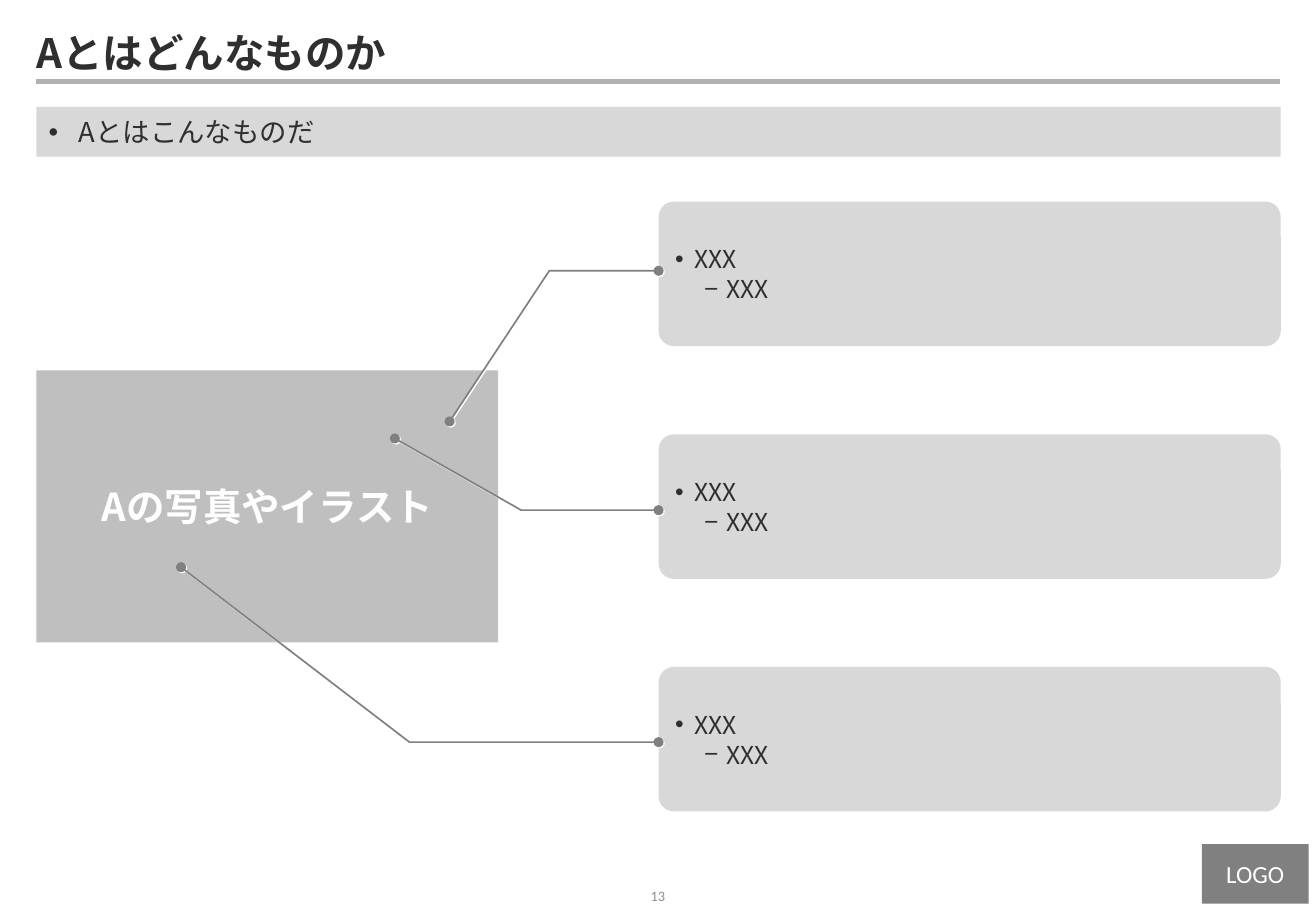
from dataclasses import dataclass

from lxml.etree import SubElement
from pptx import Presentation
from pptx.dml.color import RGBColor
from pptx.enum.shapes import MSO_CONNECTOR, MSO_SHAPE
from pptx.enum.text import MSO_ANCHOR, MSO_AUTO_SIZE, PP_ALIGN
from pptx.oxml.ns import qn
from pptx.util import Inches, Pt


@dataclass(frozen=True)
class Theme:
    japanese_font: str = "Noto Sans CJK JP"
    latin_font: str = "Calibri"
    ink: str = "2F2F2F"
    white: str = "FFFFFF"
    rule: str = "B1B1B1"
    panel: str = "D8D8D8"
    illustration: str = "BFBFBF"
    accent: str = "808080"
    muted: str = "8F8F8F"
    title_size: float = 24
    illustration_size: float = 22.8
    lead_size: float = 16.2
    body_size: float = 14.6
    number_size: float = 8.5


THEME = Theme()


def add_bullet(paragraph, character, left, hanging):
    properties = paragraph._p.get_or_add_pPr()
    properties.set("marL", str(Inches(left)))
    properties.set("indent", str(-Inches(hanging)))
    SubElement(properties, qn("a:buFont"), typeface="Arial")
    SubElement(properties, qn("a:buChar"), char=character)


def write(paragraph, text, size=THEME.body_size, color=THEME.ink, font=THEME.japanese_font,
          bold=False, align=PP_ALIGN.LEFT, line_spacing=None, space_before=0,
          level=0, bullet=None):
    """Fill a paragraph; bullet is (character, left margin, hanging indent)."""
    paragraph.alignment = align
    paragraph.level = level
    paragraph.space_before = Pt(space_before)
    if line_spacing:
        paragraph.line_spacing = line_spacing
    if bullet:
        add_bullet(paragraph, *bullet)
    run = paragraph.add_run()
    run.text = text
    run.font.size = Pt(size)
    run.font.bold = bold
    run.font.name = font
    run.font.color.rgb = RGBColor.from_string(color)
    SubElement(run._r.get_or_add_rPr(), qn("a:ea"), typeface=font)


class SlideBuilder:
    def __init__(self, slide, theme):
        self.slide = slide
        self.theme = theme

    def frame(self, shape, anchor=MSO_ANCHOR.MIDDLE, insets=(0.1, 0.05, 0.1, 0.05)):
        """Set up the text frame and return it."""
        frame = shape.text_frame
        frame.word_wrap = True
        frame.auto_size = MSO_AUTO_SIZE.NONE
        frame.vertical_anchor = anchor
        (frame.margin_left, frame.margin_top,
         frame.margin_right, frame.margin_bottom) = map(Inches, insets)
        return frame

    def fill(self, shape, color):
        shape.fill.solid()
        shape.fill.fore_color.rgb = RGBColor.from_string(color)

    def placeholder(self, index, box, text, fill=None, anchor=MSO_ANCHOR.MIDDLE,
                    insets=(0, 0, 0.1, 0), **text_format):
        shape = self.slide.placeholders[index]
        shape.left, shape.top, shape.width, shape.height = map(Inches, box)
        if fill:
            self.fill(shape, fill)
        frame = self.frame(shape, anchor, insets)
        write(frame.paragraphs[0], text, line_spacing=0.9, **text_format)

    def panel(self, box, fill, kind=MSO_SHAPE.RECTANGLE):
        shape = self.slide.shapes.add_shape(kind, *map(Inches, box))
        shape.shadow.inherit = False
        shape.line.fill.background()
        self.fill(shape, fill)
        return shape

    def label(self, box, fill, text, **text_format):
        frame = self.frame(self.panel(box, fill))
        write(frame.paragraphs[0], text, color=self.theme.white,
              align=PP_ALIGN.CENTER, **text_format)

    def note(self, box, point, detail):
        shape = self.panel(box, self.theme.panel, MSO_SHAPE.ROUNDED_RECTANGLE)
        shape.adjustments[0] = 0.106
        frame = self.frame(shape)
        spacing = Pt(17.8)
        write(frame.paragraphs[0], point, line_spacing=spacing, bullet=("•", 0.16, 0.16))
        write(frame.add_paragraph(), detail, line_spacing=spacing, level=1,
              bullet=("−", 0.42, 0.18))

    def page_number(self, box, text):
        shape = self.slide.shapes.add_textbox(*map(Inches, box))
        frame = self.frame(shape, insets=(0, 0, 0, 0))
        write(frame.paragraphs[0], text, size=self.theme.number_size, color=self.theme.muted,
              font=self.theme.latin_font, align=PP_ALIGN.CENTER)

    def rule(self, left, right, top):
        line = self.slide.shapes.add_connector(
            MSO_CONNECTOR.STRAIGHT, *map(Inches, (left, top, right, top)))
        line.line.color.rgb = RGBColor.from_string(self.theme.rule)
        line.line.width = Pt(3)
        SubElement(line._element.spPr, qn("a:effectLst"))

    def callout(self, *points):
        """Draw an open bent line with round ends and a thin white halo."""
        start, *rest = [tuple(map(Inches, point)) for point in points]
        builder = self.slide.shapes.build_freeform(*start, scale=1.0)
        builder.add_line_segments(rest, close=False)
        shape = builder.convert_to_shape()
        shape.fill.background()
        shape.line.color.rgb = RGBColor.from_string(self.theme.accent)
        shape.line.width = Pt(1)
        outline = shape.line._get_or_add_ln()
        for end in ("a:headEnd", "a:tailEnd"):
            SubElement(outline, qn(end), type="oval")
        shape.shadow.inherit = False
        effects = shape._element.spPr.find(qn("a:effectLst"))
        halo = SubElement(effects, qn("a:outerShdw"), blurRad="0", dist=str(Pt(1)),
                          dir="2700000", rotWithShape="0")
        SubElement(halo, qn("a:srgbClr"), val=self.theme.white)


def main():
    presentation = Presentation()
    presentation.slide_width = Inches(10.83)
    presentation.slide_height = Inches(7.5)
    slide = presentation.slides.add_slide(presentation.slide_layouts[1])
    builder = SlideBuilder(slide, THEME)

    left, width = 0.3, 10.24
    builder.rule(left, 10.53, 0.67)
    builder.label((9.89, 6.95, 0.88, 0.49), THEME.accent, "LOGO", font=THEME.latin_font)
    builder.page_number((5.1, 7.25, 0.63, 0.25), "13")
    builder.placeholder(0, (left, 0.25, width, 0.41), "Aとはどんなものか",
                        size=THEME.title_size, bold=True)
    builder.placeholder(1, (left, 0.88, width, 0.41), "Aとはこんなものだ",
                        fill=THEME.panel, anchor=MSO_ANCHOR.TOP,
                        insets=(0.1, 0.1, 0.1, 0.05), size=THEME.lead_size,
                        space_before=10, bullet=("•", 0.25, 0.25))

    note_left, note_top, note_pitch = 5.42, 1.66, 1.915
    for row in range(3):
        builder.note((note_left, note_top + row * note_pitch, 5.12, 1.19), "XXX", "XXX")

    builder.label((left, 3.05, 3.8, 2.24), THEME.illustration, "Aの写真やイラスト",
                  size=THEME.illustration_size, bold=True)
    for target, bend_x, level in (((3.25, 3.61), 4.29, 4.2),
                                  ((3.7, 3.47), 4.52, 2.23),
                                  ((1.49, 4.67), 3.37, 6.11)):
        builder.callout(target, (bend_x, level), (note_left, level))

    presentation.save("out.pptx")


if __name__ == "__main__":
    main()
